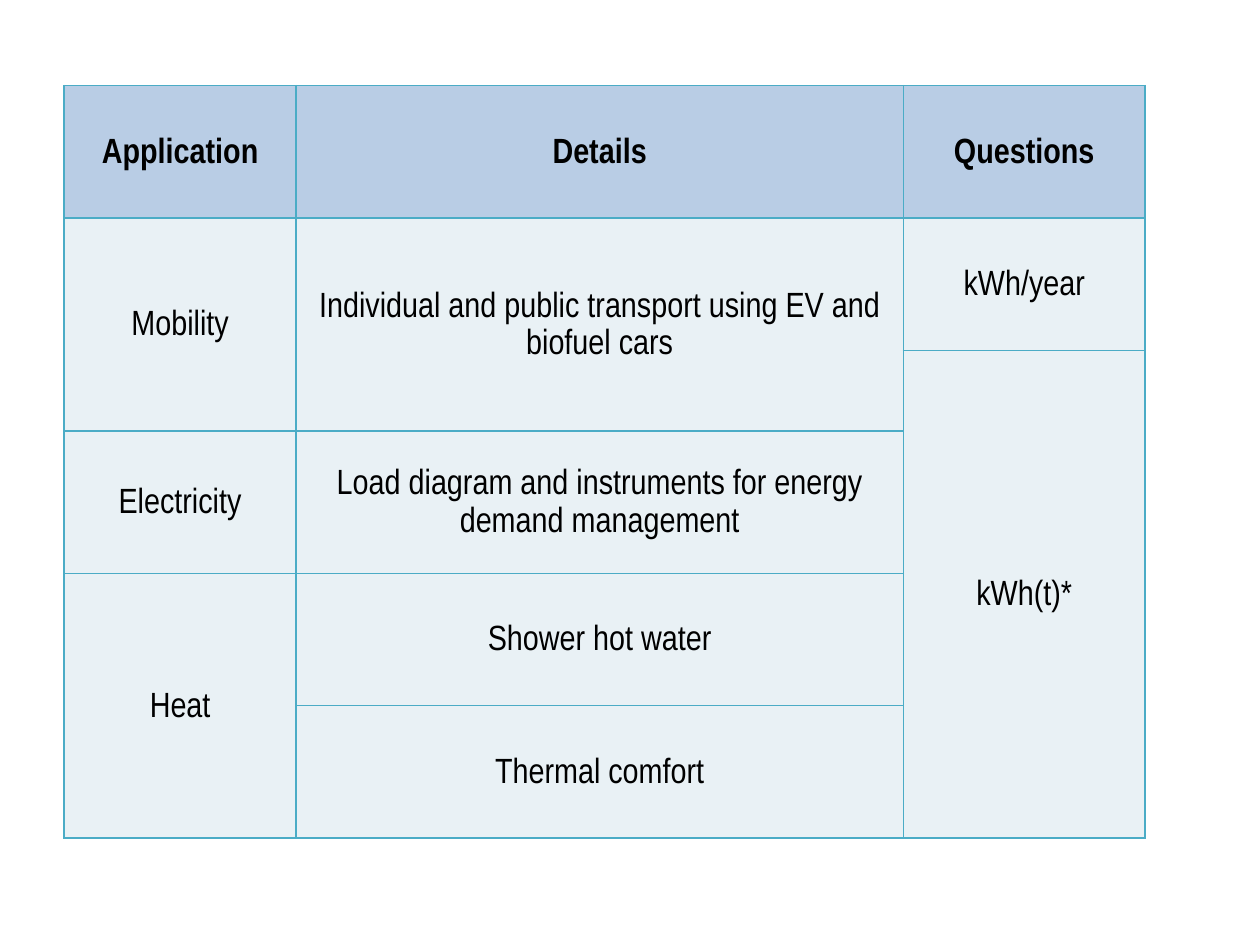
from dataclasses import dataclass

from lxml.etree import SubElement
from pptx import Presentation
from pptx.dml.color import RGBColor
from pptx.enum.text import MSO_ANCHOR, PP_ALIGN
from pptx.oxml.ns import qn
from pptx.util import Inches, Pt


@dataclass(frozen=True)
class Theme:
    font: str = "Arial Narrow"
    size: int = 20
    spacing: float = 1.15
    text: str = "000000"
    header: str = "B9CDE5"
    body: str = "E9F1F5"
    border: str = "4BACC6"
    border_width: int = 1
    margin: float = 0.07


THEME = Theme()
SLIDE_WIDTH, SLIDE_HEIGHT = 10, 7.5
TABLE_LEFT, TABLE_TOP = 0.51, 0.68
COLUMN_WIDTHS = (1.84, 4.82, 1.92)
ROW_HEIGHTS = (1.05, 1.05, 0.64, 1.13, 1.05, 1.05)

# Each column lists its cells downwards as (wording, rows spanned).
COLUMNS = (
    (("Application", 1), ("Mobility", 2), ("Electricity", 1), ("Heat", 2)),
    (
        ("Details", 1),
        ("Individual and public transport using EV and biofuel cars", 2),
        ("Load diagram and instruments for energy demand management", 1),
        ("Shower hot water", 1),
        ("Thermal comfort", 1),
    ),
    (("Questions", 1), ("kWh/year", 1), ("kWh(t)*", 4)),
)


def style_cell(cell, is_header):
    cell.fill.solid()
    cell.fill.fore_color.rgb = RGBColor.from_string(THEME.header if is_header else THEME.body)
    cell.vertical_anchor = MSO_ANCHOR.MIDDLE
    cell.margin_left = cell.margin_right = Inches(THEME.margin)
    cell.margin_top = cell.margin_bottom = 0
    properties = cell._tc.get_or_add_tcPr()
    for position, side in enumerate(("a:lnL", "a:lnR", "a:lnT", "a:lnB")):
        line = SubElement(properties, qn(side), w=str(Pt(THEME.border_width)))
        fill = SubElement(line, qn("a:solidFill"))
        SubElement(fill, qn("a:srgbClr"), val=THEME.border)
        properties.insert(position, line)


def write_cell(cell, wording, is_header):
    para = cell.text_frame.paragraphs[0]
    para.alignment = PP_ALIGN.CENTER
    para.line_spacing = THEME.spacing
    span = para.add_run()
    span.text = wording
    span.font.name = THEME.font
    span.font.size = Pt(THEME.size)
    span.font.bold = is_header
    span.font.color.rgb = RGBColor.from_string(THEME.text)


def add_application_table(page):
    frame = page.shapes.add_table(
        len(ROW_HEIGHTS), len(COLUMN_WIDTHS),
        Inches(TABLE_LEFT), Inches(TABLE_TOP),
        Inches(sum(COLUMN_WIDTHS)), Inches(sum(ROW_HEIGHTS)),
    )
    table = frame.table
    for column, width in zip(table.columns, COLUMN_WIDTHS):
        column.width = Inches(width)
    for row_index, (row, height) in enumerate(zip(table.rows, ROW_HEIGHTS)):
        row.height = Inches(height)
        for cell in row.cells:
            style_cell(cell, row_index == 0)
    for column_index, entries in enumerate(COLUMNS):
        row_index = 0
        for wording, rows in entries:
            cell = table.cell(row_index, column_index)
            if rows > 1:
                cell.merge(table.cell(row_index + rows - 1, column_index))
            write_cell(cell, wording, row_index == 0)
            row_index += rows


def main():
    deck = Presentation()
    deck.slide_width, deck.slide_height = Inches(SLIDE_WIDTH), Inches(SLIDE_HEIGHT)
    page = deck.slides.add_slide(deck.slide_layouts[6])
    add_application_table(page)
    deck.save("out.pptx")


if __name__ == "__main__":
    main()
